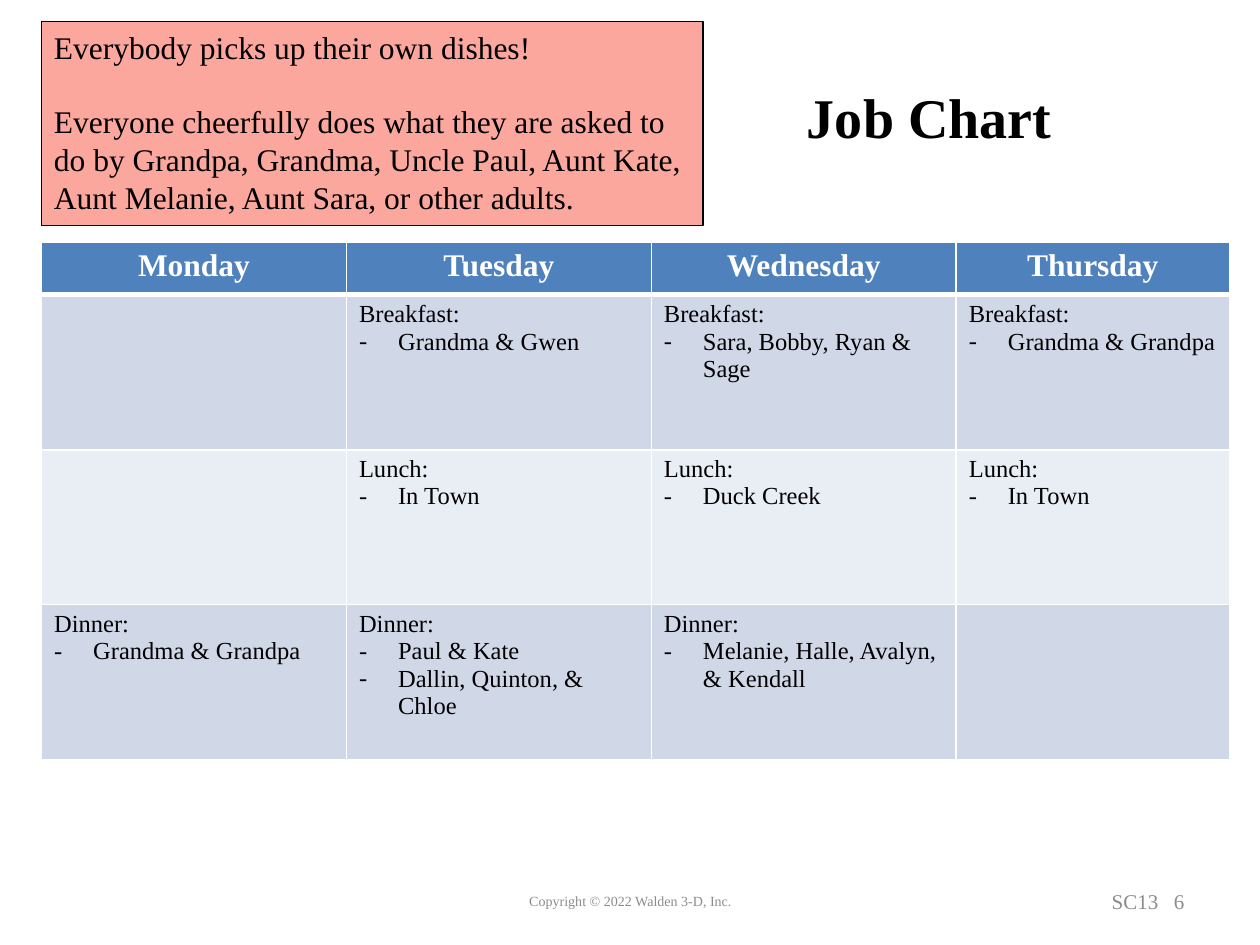
from dataclasses import dataclass

from lxml.etree import SubElement
from pptx import Presentation
from pptx.dml.color import RGBColor as Rgb
from pptx.enum.shapes import MSO_SHAPE as Shape
from pptx.enum.text import MSO_ANCHOR as Anchor, PP_ALIGN as Align
from pptx.oxml import parse_xml
from pptx.oxml.ns import nsdecls, qn
from pptx.util import Inches, Pt


@dataclass(frozen=True)
class Theme:
    """Colours, type sizes and the font of the slide."""
    font: str = "Times New Roman"
    ink: str = "000000"
    white: str = "FFFFFF"
    muted: str = "8C8C8C"
    notice: str = "FCA79E"
    header: str = "4F81BD"
    bands: tuple = ("D0D8E8", "E9EDF4")
    title_size: int = 32
    large_size: int = 18
    body_size: int = 14
    number_size: int = 12
    footer_size: int = 8


DAYS = ["Monday", "Tuesday", "Wednesday", "Thursday"]
MEALS = {
    "Breakfast:": [[], ["Grandma & Gwen"], ["Sara, Bobby, Ryan & Sage"], ["Grandma & Grandpa"]],
    "Lunch:": [[], ["In Town"], ["Duck Creek"], ["In Town"]],
    "Dinner:": [["Grandma & Grandpa"], ["Paul & Kate", "Dallin, Quinton, & Chloe"],
                ["Melanie, Halle, Avalyn, & Kendall"], []],
}
RULES = [
    "Everybody picks up their own dishes!",
    "Everyone cheerfully does what they are asked to do by Grandpa, Grandma, "
    "Uncle Paul, Aunt Kate, Aunt Melanie, Aunt Sara, or other adults.",
]


class SlideBuilder:
    """Draws the elements of one slide in one theme."""

    def __init__(self, slide, theme):
        self.slide = slide
        self.theme = theme

    def style(self, para, size, color, bold=False, align=Align.LEFT):
        para.alignment = align
        for span in para.runs:
            span.font.name = self.theme.font
            span.font.size = Pt(size)
            span.font.bold = bold
            span.font.color.rgb = Rgb.from_string(color)

    def label(self, text, place, size, color, align, bold=False):
        box = self.slide.shapes.add_textbox(*map(Inches, place))
        frame = box.text_frame
        frame.word_wrap = True
        frame.vertical_anchor = Anchor.MIDDLE
        frame.text = text
        self.style(frame.paragraphs[0], size, color, bold, align)

    def notice(self, lines, place, gap):
        box = self.slide.shapes.add_shape(Shape.RECTANGLE, *map(Inches, place))
        box.shadow.inherit = False
        box.fill.solid()
        box.fill.fore_color.rgb = Rgb.from_string(self.theme.notice)
        box.line.color.rgb = Rgb.from_string(self.theme.ink)
        box.line.width = Pt(0.75)
        frame = box.text_frame
        frame.word_wrap = True
        frame.vertical_anchor = Anchor.TOP
        frame.text = "\n".join(lines)
        for para in frame.paragraphs:
            self.style(para, self.theme.large_size, self.theme.ink)
        for para in frame.paragraphs[1:]:
            para.space_before = Pt(gap)

    def paint(self, cell, color, bottom=1):
        cell.fill.solid()
        cell.fill.fore_color.rgb = Rgb.from_string(color)
        properties = cell._tc.get_or_add_tcPr()
        for index, (side, width) in enumerate([("L", 1), ("R", 1), ("T", 1), ("B", bottom)]):
            properties.insert(index, parse_xml(
                f'<a:ln{side} {nsdecls("a")} w="{Pt(width)}"><a:solidFill>'
                f'<a:srgbClr val="{self.theme.white}"/></a:solidFill></a:ln{side}>'))

    def dash(self, para, indent):
        properties = para._p.get_or_add_pPr()
        properties.set("marL", str(Inches(indent)))
        properties.set("indent", str(Inches(-indent)))
        SubElement(properties, qn("a:buFont")).set("typeface", self.theme.font)
        SubElement(properties, qn("a:buChar")).set("char", "-")

    def meal(self, cell, name, jobs):
        if not jobs:
            return
        cell.text_frame.text = "\n".join([name, *jobs])
        for index, para in enumerate(cell.text_frame.paragraphs):
            if index:
                self.dash(para, 0.31)
            self.style(para, self.theme.body_size, self.theme.ink)

    def job_table(self, days, meals, place, widths, heights):
        table = self.slide.shapes.add_table(len(heights), len(widths), *map(Inches, place)).table
        for column, width in zip(table.columns, widths):
            column.width = Inches(width)
        for row, height in zip(table.rows, heights):
            row.height = Inches(height)
        for cell, day in zip(table.rows[0].cells, days):
            self.paint(cell, self.theme.header, bottom=3)
            cell.text_frame.text = day
            self.style(cell.text_frame.paragraphs[0], self.theme.large_size,
                       self.theme.white, True, Align.CENTER)
        for index, (name, plan) in enumerate(meals.items()):
            for column, jobs in enumerate(plan):
                cell = table.cell(index + 1, column)
                self.paint(cell, self.theme.bands[index % 2], bottom=1)
                if index == 0:
                    cell._tc.tcPr.find(qn("a:lnT")).set("w", str(Pt(3)))
                self.meal(cell, name, jobs)


def main():
    deck = Presentation()
    deck.slide_width, deck.slide_height = Inches(10), Inches(7.5)
    theme = Theme()
    page = SlideBuilder(deck.slides.add_slide(deck.slide_layouts[6]), theme)
    page.label("Job Chart", (5.25, 0.3, 4.25, 1.25), theme.title_size, theme.ink,
               Align.CENTER, bold=True)
    page.label("SC13\u00a0\u00a0 6".replace("\u00a0", " "), (7.17, 6.95, 2.33, 0.4),
               theme.number_size, theme.muted, Align.RIGHT)
    page.job_table(DAYS, MEALS, (0.33, 1.92, 9.42, 4.1),
                   [2.42] * 3 + [2.17], [0.42] + [1.23] * 3)
    page.notice(RULES, (0.33, 0.17, 5.25, 1.62), gap=21)
    page.label("Copyright © 2022 Walden 3-D, Inc.", (3.42, 6.95, 3.17, 0.4),
               theme.footer_size, theme.muted, Align.CENTER)
    deck.save("out.pptx")


if __name__ == "__main__":
    main()
